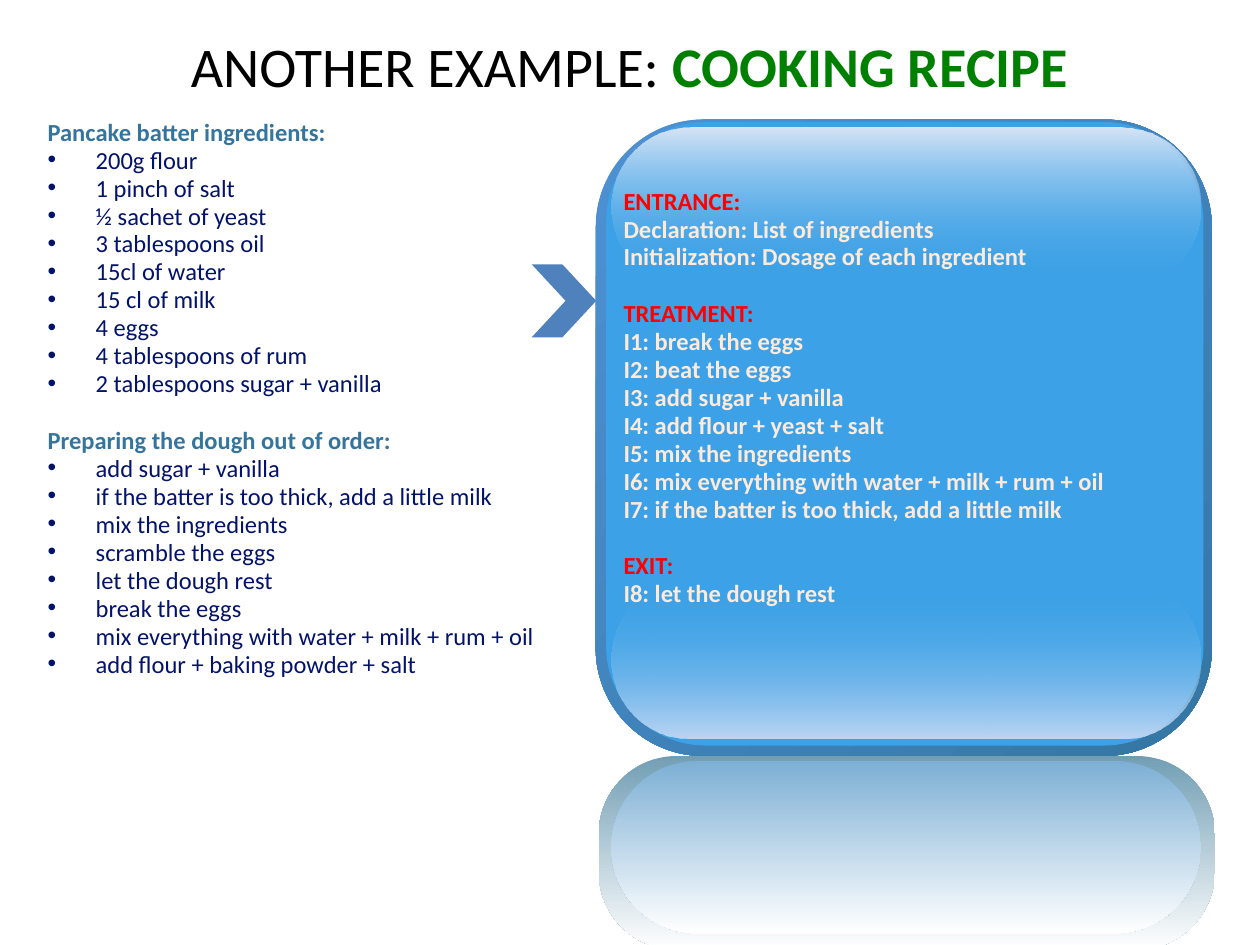
from lxml import etree
from pptx import Presentation
from pptx.dml.color import RGBColor
from pptx.enum.shapes import MSO_SHAPE
from pptx.enum.text import MSO_ANCHOR, PP_ALIGN
from pptx.oxml.ns import qn
from pptx.util import Cm, Pt

CHEVRON = MSO_SHAPE.CHEVRON
ROUNDED = MSO_SHAPE.ROUNDED_RECTANGLE
FONT = "Calibri"
COLOURS = {
    "black": "000000", "green": "008000", "teal": "35759D", "navy": "03136A",
    "red": "FF0000", "cream": "FDEADA", "chevron": "4F81BD", "face": "3CA1E6",
    "frame light": "4E91D4", "frame dark": "3477A4",
    "gloss bottom": "BDD6F3", "gloss top": "D7E5F7",
    "reflected frame": "729EB4", "reflected face": "7DAFD4", "white": "FFFFFF",
}

TITLE = [("ANOTHER EXAMPLE: ", "black", False), ("COOKING RECIPE", "green", True)]

RECIPE = [
    ("Pancake batter ingredients:", [
        "200g flour", "1 pinch of salt", "½ sachet of yeast", "3 tablespoons oil",
        "15cl of water", "15 cl of milk", "4 eggs", "4 tablespoons of rum",
        "2 tablespoons sugar + vanilla"]),
    ("Preparing the dough out of order:", [
        "add sugar + vanilla", "if the batter is too thick, add a little milk",
        "mix the ingredients", "scramble the eggs", "let the dough rest",
        "break the eggs", "mix everything with water + milk + rum + oil",
        "add flour + baking powder + salt"]),
]

ALGORITHM = [
    ("ENTRANCE:", [
        "Declaration: List of ingredients",
        "Initialization: Dosage of each ingredient"]),
    ("TREATMENT:", [
        "I1: break the eggs", "I2: beat the eggs", "I3: add sugar + vanilla",
        "I4: add flour + yeast + salt", "I5: mix the ingredients",
        "I6: mix everything with water + milk + rum + oil",
        "I7: if the batter is too thick, add a little milk"]),
    ("EXIT:", ["I8: let the dough rest"]),
]

# Left, top, width, height in cm; corner; (colour, opacity %) stops; angle
PANEL_LAYERS = [
    ((12.01, 2.41, 12.42, 12.83), 0.175, [("frame light", 100), ("frame dark", 100)], 45),
    ((12.22, 2.46, 12.04, 12.57), 0.167, [("face", 100)], 0),
    ((12.32, 11.71, 11.89, 3.18), 0.5, [("face", 0), ("gloss bottom", 100)], 90),
    ((12.32, 2.57, 11.89, 3.18), 0.5, [("gloss top", 100), ("face", 0)], 90),
    ((12.07, 15.24, 12.42, 3.91), 0.404, [("reflected frame", 100), ("white", 100)], 90),
    ((12.32, 15.34, 11.89, 3.48), 0.5, [("reflected face", 100), ("white", 100)], 90),
]

LINE_GAP = 2.55
SECTION_GAP = 18.8
BULLET_INDENT = Cm(0.97)


def rgb(name):
    return RGBColor.from_string(COLOURS[name])


def style(font, size, colour, bold):
    font.name = FONT
    font.size = Pt(size)
    font.bold = bold
    font.color.rgb = rgb(colour)


def paint(shape, stops, angle):
    """Fill with one colour, or with a gradient turned clockwise by angle."""
    if len(stops) == 1:
        shape.fill.solid()
        shape.fill.fore_color.rgb = rgb(stops[0][0])
        return
    shape.fill.gradient()
    shape.fill.gradient_angle = 360 - angle
    for stop, (colour, _) in zip(shape.fill.gradient_stops, stops):
        stop.color.rgb = rgb(colour)
    for element, (_, opacity) in zip(shape._element.spPr.iter(qn("a:srgbClr")), stops):
        if opacity < 100:
            etree.SubElement(element, qn("a:alpha"), val=str(opacity * 1000))


def add_shape(shapes, kind, place, corner, stops, angle=0):
    shape = shapes.add_shape(kind, *map(Cm, place))
    shape.adjustments[0] = corner
    shape.shadow.inherit = False
    shape.line.fill.background()
    paint(shape, stops, angle)


def add_bullet(para):
    properties = para._p.get_or_add_pPr()
    properties.set("marL", str(BULLET_INDENT))
    properties.set("indent", str(-BULLET_INDENT))
    etree.SubElement(properties, qn("a:buFont"), typeface="Arial")
    etree.SubElement(properties, qn("a:buChar"), char="•")


def add_sections(page, place, sections, heading_colour, item_colour, item_bold, bulleted):
    frame = page.shapes.add_textbox(*map(Cm, place)).text_frame
    frame.word_wrap = True
    para = frame.paragraphs[0]
    for number, (heading, items) in enumerate(sections):
        for position, text in enumerate([heading] + items):
            is_heading = position == 0
            if number or position:
                para = frame.add_paragraph()
            para.text = text
            if bulleted and not is_heading:
                add_bullet(para)
            para.line_spacing = 0.8
            if not is_heading:
                para.space_before = Pt(LINE_GAP)
            elif number:
                para.space_before = Pt(SECTION_GAP)
            style(para.runs[0].font, 14,
                  heading_colour if is_heading else item_colour,
                  is_heading or item_bold)


def add_title(page):
    title = page.shapes.title
    title.left, title.top, title.width, title.height = map(Cm, (0.89, 0.33, 23.6, 1.98))
    title.text_frame.vertical_anchor = MSO_ANCHOR.MIDDLE
    para = title.text_frame.paragraphs[0]
    para.alignment = PP_ALIGN.CENTER
    for text, colour, bold in TITLE:
        span = para.add_run()
        span.text = text
        style(span.font, 32, colour, bold)


def main():
    deck = Presentation()
    deck.slide_width, deck.slide_height = Cm(25.4), Cm(19.05)
    page = deck.slides.add_slide(deck.slide_layouts[5])
    add_title(page)
    add_sections(page, (0.71, 2.34, 11.2, 12.19), RECIPE, "teal", "navy", False, True)
    add_shape(page.shapes, CHEVRON, (10.72, 5.33, 1.3, 1.47), 0.525, [("chevron", 100)])
    panel = page.shapes.add_group_shape()
    for place, corner, stops, angle in PANEL_LAYERS:
        add_shape(panel.shapes, ROUNDED, place, corner, stops, angle)
    add_sections(page, (12.32, 3.73, 12.17, 12.09), ALGORITHM, "red", "cream", True, False)
    deck.save("out.pptx")


if __name__ == "__main__":
    main()
